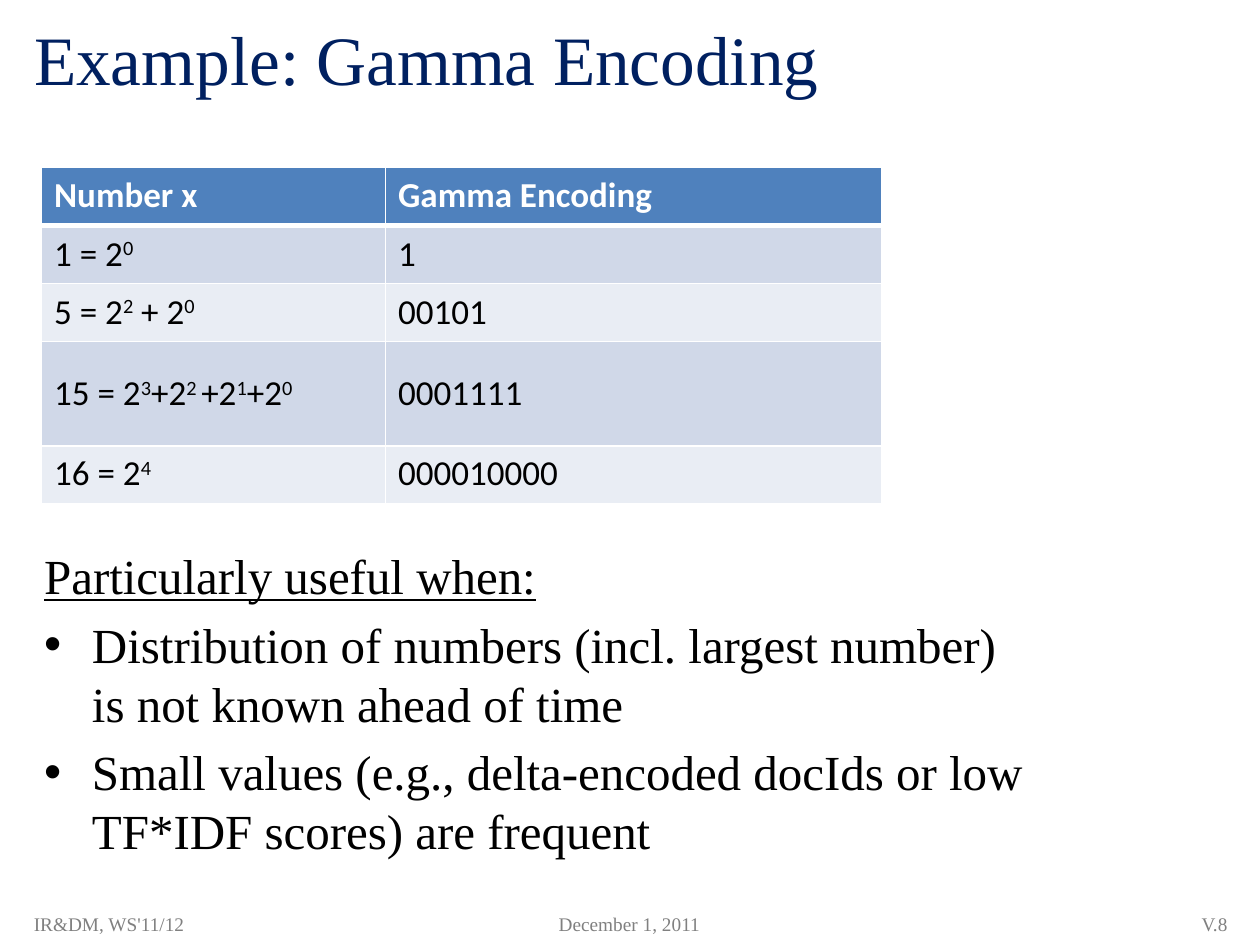
from dataclasses import dataclass

from lxml import etree
from pptx import Presentation
from pptx import util as u
from pptx.dml.color import RGBColor
from pptx.enum import text as t
from pptx.oxml.ns import qn


@dataclass(frozen=True)
class Theme:
    serif: str = "Times New Roman"
    sans: str = "Calibri"
    navy: str = "002060"
    black: str = "000000"
    white: str = "FFFFFF"
    gray: str = "808080"
    blue: str = "4F81BD"
    bands: tuple = ("D0D8E8", "E9EDF4")
    title: float = 39.6
    body: float = 28
    cell: float = 20
    foot: float = 11


@dataclass(frozen=True)
class Box:
    left: float
    top: float
    width: float
    height: float

    def spans(self) -> tuple:
        return tuple(u.Inches(v) for v in
                     (self.left, self.top, self.width, self.height))


@dataclass(frozen=True)
class Foot:
    words: str
    box: Box
    align: t.PP_ALIGN


LOOK = Theme()
LEFT, MID, RIGHT = t.PP_ALIGN.LEFT, t.PP_ALIGN.CENTER, t.PP_ALIGN.RIGHT

# Carets enclose superscripts
ROWS = [
    ("Number x", "Gamma Encoding"),
    ("1 = 2^0^", "1"),
    ("5 = 2^2^ + 2^0^", "00101"),
    ("15 = 2^3^+2^2 ^+2^1^+2^0^", "0001111"),
    ("16 = 2^4^", "000010000"),
]
WIDTHS = (2.73, 3.94)
HEIGHTS = (0.46, 0.46, 0.46, 0.83, 0.46)
HEAD = "Particularly useful when:"
POINTS = [
    "Distribution of numbers (incl. largest number) is not known ahead of time",
    "Small values (e.g., delta-encoded docIds or low TF*IDF scores) are frequent",
]
FEET = [
    Foot("IR&DM, WS'11/12", Box(0.17, 7.17, 3, 0.33), LEFT),
    Foot("December 1, 2011", Box(3.83, 7.17, 2.33, 0.33), MID),
    Foot("V.8", Box(7.67, 7.17, 2.17, 0.33), RIGHT),
]


def style(font, face: str, size: float, color: str, bold: bool = False) -> None:
    font.name, font.size, font.bold = face, u.Pt(size), bold
    font.color.rgb = RGBColor.from_string(color)


def place(shape, box: Box) -> None:
    shape.left, shape.top, shape.width, shape.height = box.spans()


def add_title(slide, words: str) -> None:
    shape = slide.shapes.title
    place(shape, Box(0.17, 0.08, 9.67, 0.75))
    frame = shape.text_frame
    frame.text = words
    frame.auto_size = t.MSO_AUTO_SIZE.NONE
    frame.vertical_anchor = t.MSO_ANCHOR.MIDDLE
    para = frame.paragraphs[0]
    para.alignment = LEFT
    style(para.font, LOOK.serif, LOOK.title, LOOK.navy)


def add_body(slide) -> None:
    shape = slide.placeholders[1]
    place(shape, Box(0.25, 4.28, 8, 4.56))
    frame = shape.text_frame
    frame.text = "\n".join([HEAD, *POINTS])
    frame.auto_size = t.MSO_AUTO_SIZE.NONE
    for i, para in enumerate(frame.paragraphs):
        para.space_before = u.Pt(0.2 * LOOK.body)
        style(para.font, LOOK.serif, LOOK.body, LOOK.black)
        para.font.underline = i == 0
        # Hanging indent, with bullets below the heading
        props = para._p.get_or_add_pPr()
        props.set("marL", str(u.Inches(0.38)))
        props.set("indent", str(-u.Inches(0.38)))
        mark = etree.Element(qn("a:buChar" if i else "a:buNone"))
        if i:
            mark.set("char", "•")
        props.find(qn("a:spcBef")).addnext(mark)


def add_edges(cell, base: float, top: float) -> None:
    props = cell._tc.get_or_add_tcPr()
    for side, size in (("L", 1), ("R", 1), ("T", top), ("B", base)):
        line = etree.SubElement(props, qn(f"a:ln{side}"), w=str(u.Pt(size)))
        fill = etree.SubElement(line, qn("a:solidFill"))
        etree.SubElement(fill, qn("a:srgbClr"), val=LOOK.white)


def fill_cell(cell, words: str, row: int) -> None:
    add_edges(cell, 3 if row == 0 else 1, 3 if row == 1 else 1)
    tint = LOOK.bands[(row - 1) % 2] if row else LOOK.blue
    cell.fill.solid()
    cell.fill.fore_color.rgb = RGBColor.from_string(tint)
    if row in (1, 2, 3):
        cell.vertical_anchor = t.MSO_ANCHOR.MIDDLE
    para = cell.text_frame.paragraphs[0]
    color = LOOK.black if row else LOOK.white
    style(para.font, LOOK.sans, LOOK.cell, color, row == 0)
    for i, part in enumerate(words.split("^")):
        if part:
            run = para.add_run()
            run.text = part
            style(run.font, LOOK.sans, LOOK.cell, color, row == 0)
            if i % 2:
                run._r.get_or_add_rPr().set("baseline", "30000")


def add_grid(slide) -> None:
    box = Box(0.33, 1.33, sum(WIDTHS), sum(HEIGHTS))
    grid = slide.shapes.add_table(len(ROWS), len(WIDTHS), *box.spans()).table
    for col, width in zip(grid.columns, WIDTHS):
        col.width = u.Inches(width)
    for r, (words, height) in enumerate(zip(ROWS, HEIGHTS)):
        grid.rows[r].height = u.Inches(height)
        for c, word in enumerate(words):
            fill_cell(grid.cell(r, c), word, r)


def add_foot(slide, foot: Foot) -> None:
    frame = slide.shapes.add_textbox(*foot.box.spans()).text_frame
    frame.word_wrap = True
    frame.vertical_anchor = t.MSO_ANCHOR.MIDDLE
    frame.text = foot.words
    para = frame.paragraphs[0]
    para.alignment = foot.align
    style(para.font, LOOK.serif, LOOK.foot, LOOK.gray)


def main() -> None:
    deck = Presentation()
    deck.slide_width, deck.slide_height = u.Inches(10), u.Inches(7.5)
    slide = deck.slides.add_slide(deck.slide_layouts[1])
    add_title(slide, "Example: Gamma Encoding")
    add_body(slide)
    for foot in FEET:
        add_foot(slide, foot)
    add_grid(slide)
    deck.save("out.pptx")


if __name__ == "__main__":
    main()
